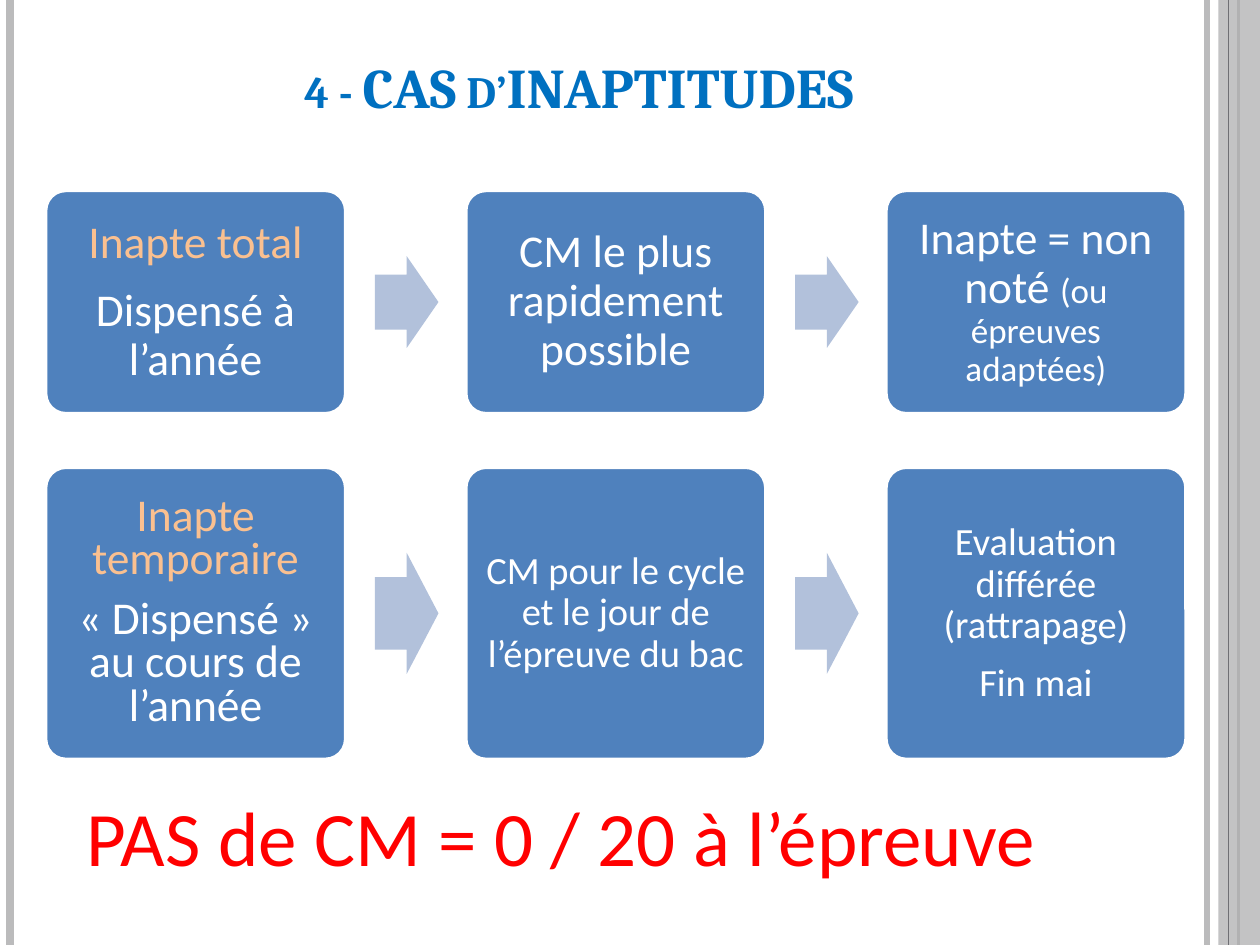
import pptx
import pptx.dml.color
import pptx.enum.shapes
import pptx.enum.text
import pptx.oxml
import pptx.oxml.ns
import pptx.util
from lxml import etree

Cm = pptx.util.Cm
Pt = pptx.util.Pt
SHAPES = pptx.enum.shapes.MSO_SHAPE
ANCHOR = pptx.enum.text.MSO_ANCHOR
ALIGN = pptx.enum.text.PP_ALIGN
COLORS = {
    "rule": "BBBBBC", "dark rule": "6F6F74", "title": "0070C0", "box": "4F81BD",
    "arrow": "B2C1DB", "accent": "FAC090", "white": "FFFFFF", "warning": "FF0000",
}


def rgb(name):
    return pptx.dml.color.RGBColor.from_string(COLORS[name])


def add_run(paragraph, text, size, color, font="Calibri"):
    run = paragraph.add_run()
    run.text = text
    run.font.name = font
    run.font.size = Pt(size)
    run.font.color.rgb = rgb(color)
    return run


presentation = pptx.Presentation()
presentation.slide_width = Cm(25.4)
presentation.slide_height = Cm(19.05)
slide = presentation.slides.add_slide(presentation.slide_layouts[6])
shapes = slide.shapes

# Vertical rules and the translucent band on the right edge
for item in [
    ("rule", 24.33, 3), ("rule", 0.2, 4.5), ("dark rule", 24.97, 1.5),
    ("band", 24.56, 0), ("dark rule", 24.77, 0.75),
]:
    name, left, width = item
    if name == "band":
        band = shapes.add_shape(SHAPES.RECTANGLE, Cm(left), 0, Cm(25.4 - left), Cm(19.05))
        band.shadow.inherit = False
        band.fill.solid()
        band.fill.fore_color.rgb = rgb("rule")
        band.line.fill.background()
        fill_color = band._element.spPr.find(".//" + pptx.oxml.ns.qn("a:srgbClr"))
        etree.SubElement(fill_color, pptx.oxml.ns.qn("a:alpha"), val="87000")
        continue
    rule = shapes.add_connector(
        pptx.enum.shapes.MSO_CONNECTOR.STRAIGHT, Cm(left), 0, Cm(left), Cm(19.05))
    rule.line.color.rgb = rgb(name)
    rule.line.width = Pt(width)
    etree.SubElement(rule._element.spPr, pptx.oxml.ns.qn("a:effectLst"))

# Title
title = shapes.add_textbox(Cm(1.3), Cm(0.91), Cm(20.75), Cm(1.63))
title.text_frame.word_wrap = True
title.text_frame.vertical_anchor = ANCHOR.BOTTOM
paragraph = title.text_frame.paragraphs[0]
paragraph.alignment = ALIGN.CENTER
run = add_run(paragraph, "4 - CAS d’INAPTITUDES", 32, "title", "Cambria")
run.font.bold = True
run.font._element.set("cap", "small")

# Two rows of three steps; a step is a list of paragraphs, a paragraph a list of runs
rows = [
    {"top": 3.84, "height": 4.5, "corner": 0.09, "inset": 0.26, "arrow": 1.85, "gap": 11,
     "steps": [
         (0.9, [[("Inapte total", 26, "accent")], [("Dispensé à l’année", 26, "white")]]),
         (0.9, [[("CM le plus rapidement possible", 26, "white")]]),
         (0.9, [[("Inapte = non noté ", 26, "white"),
                 ("(ou épreuves adaptées)", 20, "white")]]),
     ]},
    {"top": 9.42, "height": 5.89, "corner": 0.07, "inset": 0.2, "arrow": 2.44, "gap": 9,
     "steps": [
         (0.8, [[("Inapte temporaire", 26, "accent")],
                [("« Dispensé » au cours de l’année", 26, "white")]]),
         (0.9, [[("CM pour le cycle et le jour de l’épreuve du bac", 22, "white")]]),
         (0.9, [[("Evaluation différée (rattrapage)", 22, "white")],
                [("Fin mai", 22, "white")]]),
     ]},
]
first_left, pitch, box_width = 0.92, 8.47, 6.05
arrow_offset, arrow_width = 6.64, 1.28

for row in rows:
    for column, (spacing, paragraphs) in enumerate(row["steps"]):
        left = first_left + column * pitch
        box = shapes.add_shape(SHAPES.ROUNDED_RECTANGLE, Cm(left), Cm(row["top"]),
                               Cm(box_width), Cm(row["height"]))
        box.adjustments[0] = row["corner"]
        box.shadow.inherit = False
        box.fill.solid()
        box.fill.fore_color.rgb = rgb("box")
        box.line.color.rgb = rgb("white")
        box.line.width = Pt(2)
        frame = box.text_frame
        frame.word_wrap = True
        frame.vertical_anchor = ANCHOR.MIDDLE
        frame.margin_left = frame.margin_right = Cm(row["inset"])
        frame.margin_top = frame.margin_bottom = Cm(row["inset"])
        for index, runs in enumerate(paragraphs):
            paragraph = frame.add_paragraph() if index else frame.paragraphs[0]
            paragraph.alignment = ALIGN.CENTER
            paragraph.line_spacing = spacing
            paragraph.space_before = Pt(row["gap"] if index else 0)
            for text, size, color in runs:
                add_run(paragraph, text, size, color)

        # Arrow to the next step
        if column < len(row["steps"]) - 1:
            arrow_top = row["top"] + (row["height"] - row["arrow"]) / 2
            arrow = shapes.add_shape(SHAPES.RIGHT_ARROW, Cm(left + arrow_offset), Cm(arrow_top),
                                     Cm(arrow_width), Cm(row["arrow"]))
            arrow.adjustments[0] = 0.6
            arrow.adjustments[1] = 0.5
            arrow.shadow.inherit = False
            arrow.fill.solid()
            arrow.fill.fore_color.rgb = rgb("arrow")
            arrow.line.fill.background()

# Warning
warning = shapes.add_textbox(Cm(1.5), Cm(15.8), Cm(20.4), Cm(2.13))
warning.text_frame.word_wrap = True
add_run(warning.text_frame.paragraphs[0], "PAS de CM = 0 / 20 à l’épreuve", 44, "warning")

presentation.save("out.pptx")
